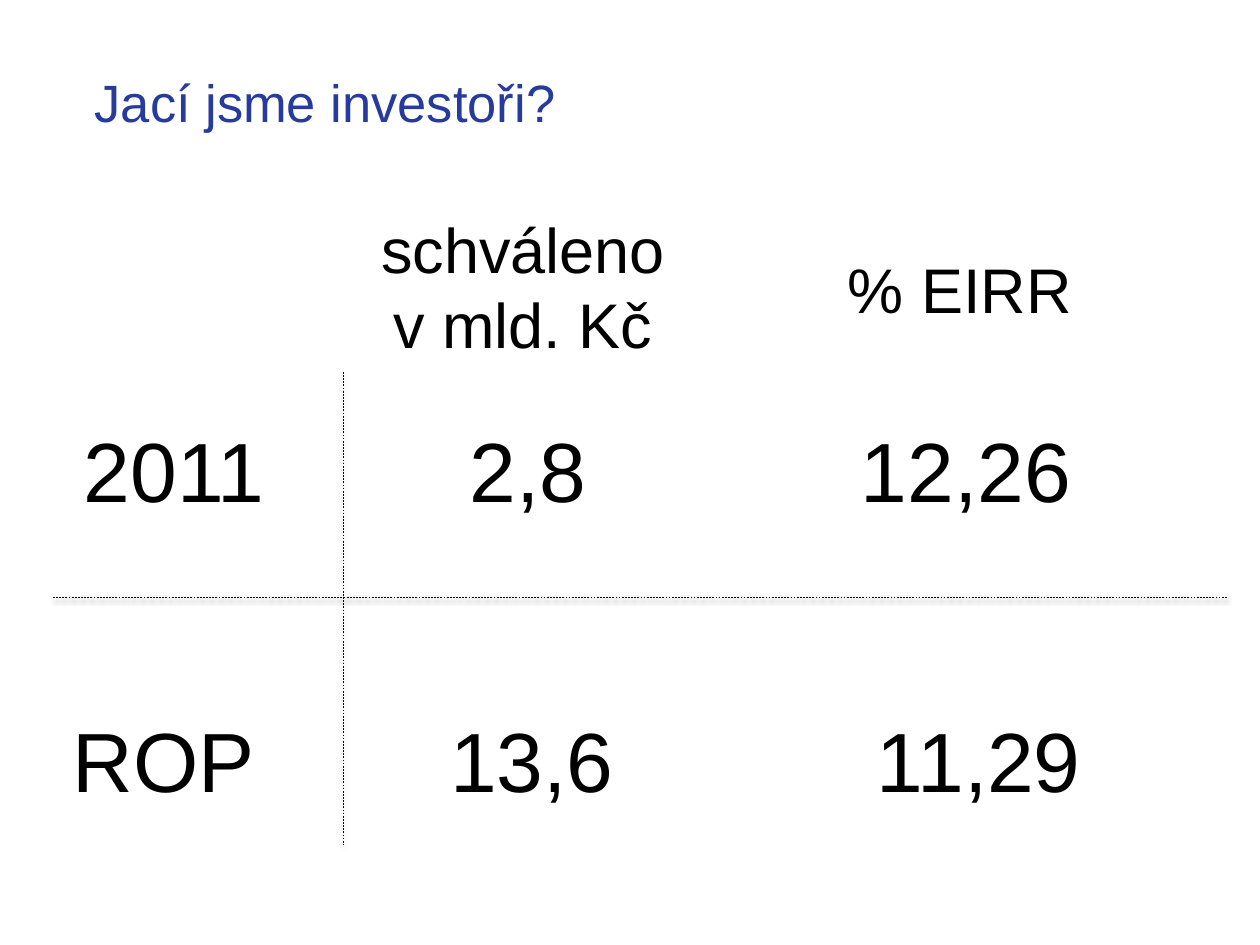
from lxml import etree
from pptx import Presentation
from pptx.dml.color import RGBColor
from pptx.enum.dml import MSO_LINE
from pptx.enum.shapes import MSO_CONNECTOR
from pptx.enum.text import MSO_ANCHOR, MSO_AUTO_SIZE, PP_ALIGN
from pptx.oxml import parse_xml
from pptx.oxml.ns import nsdecls
from pptx.util import Emu, Pt

PX = 914400 / 126
FONT = "Arial"
BLACK = "000000"
BLUE = "273B9D"
HEADING_SIZE = 36
VALUE_SIZE = 48


def px(length):
    return Emu(round(length * PX))


def color(hex_string):
    return RGBColor.from_string(hex_string)


def format_text(frame, size, hex_string, align):
    for paragraph in frame.paragraphs:
        paragraph.alignment = align
        for run in paragraph.runs:
            run.font.name = FONT
            run.font.size = Pt(size)
            run.font.bold = False
            run.font.color.rgb = color(hex_string)


def add_title(slide, text, left, top, width, height):
    title = slide.shapes.title
    title.left, title.top = px(left), px(top)
    title.width, title.height = px(width), px(height)
    frame = title.text_frame
    frame.text = text
    frame.word_wrap = True
    frame.vertical_anchor = MSO_ANCHOR.MIDDLE
    format_text(frame, 30, BLUE, PP_ALIGN.LEFT)


def add_label(slide, text, size, left, top, width, height, wrap):
    box = slide.shapes.add_textbox(px(left), px(top), px(width), px(height))
    frame = box.text_frame
    frame.text = text
    frame.word_wrap = wrap
    frame.auto_size = MSO_AUTO_SIZE.SHAPE_TO_FIT_TEXT
    format_text(frame, size, BLACK, PP_ALIGN.CENTER)


def add_divider(slide, x1, y1, x2, y2):
    divider = slide.shapes.add_connector(
        MSO_CONNECTOR.STRAIGHT, px(x1), px(y1), px(x2), px(y2))
    divider.line.color.rgb = color(BLACK)
    divider.line.width = Pt(0.25)
    divider.line.dash_style = MSO_LINE.DASH
    # Soft shadow straight below the line
    effects = etree.SubElement(
        divider._element.spPr,
        "{http://schemas.openxmlformats.org/drawingml/2006/main}effectLst")
    effects.append(parse_xml(
        f'<a:outerShdw {nsdecls("a")} blurRad="{Pt(3.1)}" dist="{Pt(1.6)}" '
        f'dir="5400000" rotWithShape="0"><a:srgbClr val="{BLACK}">'
        '<a:alpha val="38000"/></a:srgbClr></a:outerShdw>'))


def main():
    presentation = Presentation()
    presentation.slide_width, presentation.slide_height = px(1260), px(945)
    slide = presentation.slides.add_slide(presentation.slide_layouts[5])

    add_title(slide, "Jací jsme investoři?", 82, 37, 588, 129)

    # Column headings
    add_label(slide, "schváleno\nv mld. Kč", HEADING_SIZE, 367, 204, 312, 165, False)
    add_label(slide, "% EIRR", HEADING_SIZE, 834, 244, 252, 89, False)

    # Rows: top, then text, left, width and wrapping of each cell
    rows = [
        (412, [("2011", 38, 272, True), ("2,8", 446, 164, False),
               ("12,26", 745, 442, True)]),
        (702, [("ROP", 53, 221, True), ("13,6", 423, 218, False),
               ("11,29", 771, 416, True)]),
    ]
    for top, cells in rows:
        for text, left, width, wrap in cells:
            add_label(slide, text, VALUE_SIZE, left, top, width, 115, wrap)

    # Dividers between the rows and beside the row names
    add_divider(slide, 53, 597, 1227, 597)
    add_divider(slide, 343, 372, 343, 845)

    presentation.save("out.pptx")


if __name__ == "__main__":
    main()
